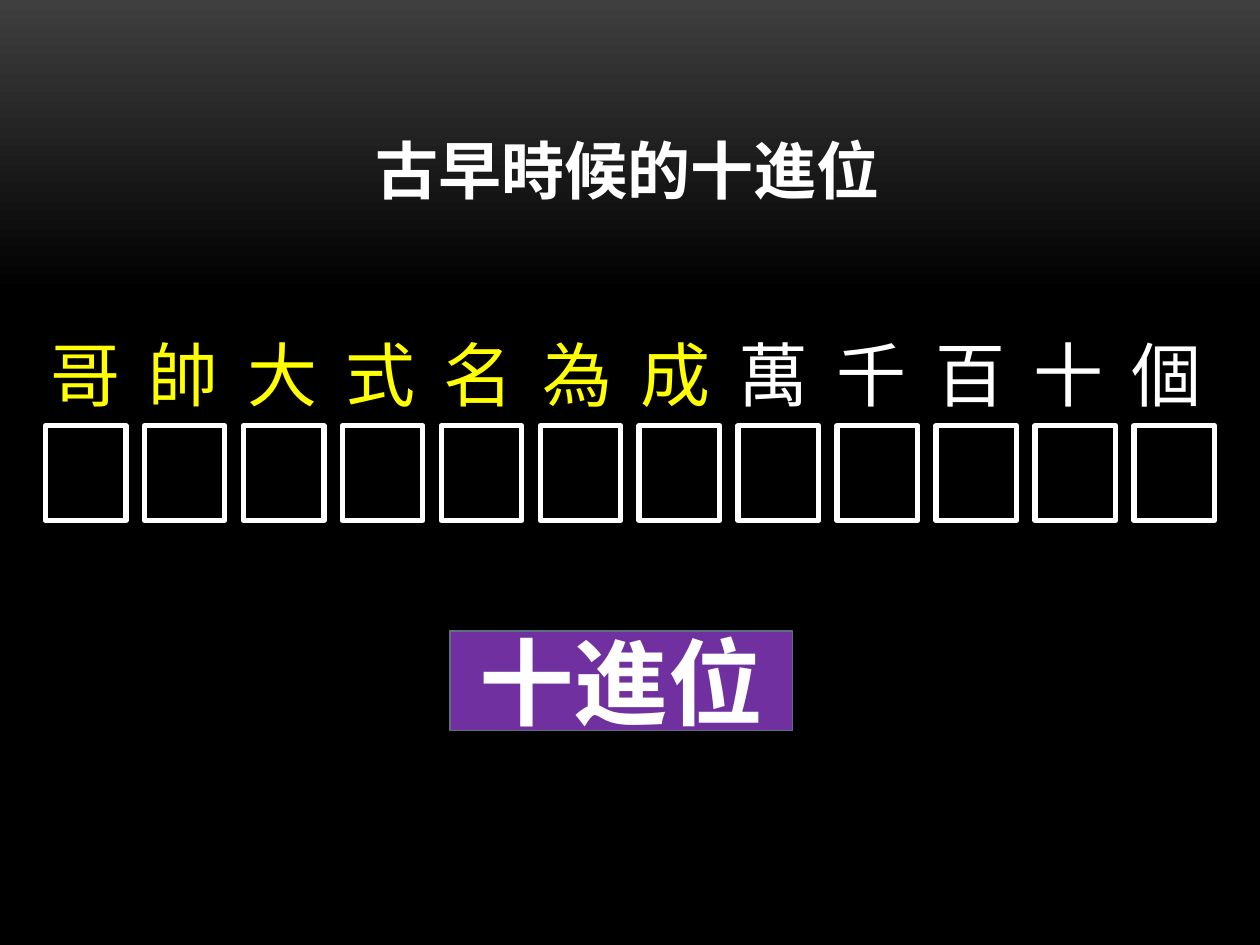
from pptx import Presentation
from pptx.dml.color import RGBColor
from pptx.enum.shapes import MSO_SHAPE as Shape
from pptx.enum.text import MSO_ANCHOR as Anchor, MSO_AUTO_SIZE as Fit, PP_ALIGN as Align
from pptx.util import Inches, Pt

WHITE, YELLOW, BLACK = "FFFFFF", "FFFF00", "000000"
PLACES = "哥帥大式名為成萬千百十個"
OLD = "哥帥大式名為成"


def paint(color, code):
    color.rgb = RGBColor.from_string(code)


def place(shape, left, top, width, height):
    shape.left, shape.top = Inches(left), Inches(top)
    shape.width, shape.height = Inches(width), Inches(height)


def write(shape, text, size, code, font, bold=False, align=Align.CENTER):
    shape.text_frame.text = text
    line = shape.text_frame.paragraphs[0]
    line.alignment = align
    line.font.name, line.font.size, line.font.bold = font, Pt(size), bold
    paint(line.font.color, code)


def add_rect(shapes, box, fill=None, edge=None, weight=1):
    rect = shapes.add_shape(Shape.RECTANGLE, *map(Inches, box))
    rect.shadow.inherit = False
    if fill:
        rect.fill.solid()
        paint(rect.fill.fore_color, fill)
    else:
        rect.fill.background()
    if edge:
        paint(rect.line.color, edge)
        rect.line.width = Pt(weight)
    else:
        rect.line.fill.background()
    frame = rect.text_frame
    frame.vertical_anchor = Anchor.MIDDLE
    frame.margin_left = frame.margin_right = 0
    return rect


def set_back(slide):
    fill = slide.background.fill
    fill.gradient()
    fill.gradient_angle = 270
    for stop, (spot, code) in zip(fill.gradient_stops, [(0, "3F3F3F"), (0.31, BLACK)]):
        stop.position = spot
        paint(stop.color, code)


def add_title(slide, box):
    title = slide.shapes.title
    place(title, *box)
    write(title, "古早時候的十進位", 36, WHITE, "Arial Narrow", True, Align.LEFT)
    frame = title.text_frame
    frame.word_wrap = False
    frame.auto_size = Fit.SHAPE_TO_FIT_TEXT
    frame.vertical_anchor = Anchor.TOP


def add_cells(slide, left, top, width, height):
    group = slide.shapes.add_group_shape()
    wide = 0.64
    step = (width - wide) / (len(PLACES) - 1)
    for i in range(len(PLACES)):
        add_rect(group.shapes, (left + i * step, top, wide, height), edge=WHITE, weight=3)


def add_names(slide, left, top, width, height):
    wide = 0.76
    step = (width - wide) / (len(PLACES) - 1)
    for i, name in enumerate(PLACES):
        rect = add_rect(slide.shapes, (left + i * step, top, wide, height), BLACK)
        write(rect, name, 40, YELLOW if name in OLD else WHITE, "Arial Narrow")


def add_label(slide, box):
    rect = add_rect(slide.shapes, box, "7030A0", "5D7080", 0.85)
    write(rect, "十進位", 54, WHITE, "Noto Sans CJK SC", True)


def main():
    deck = Presentation()
    deck.slide_width, deck.slide_height = Inches(10), Inches(7.5)
    slide = deck.slides.add_slide(deck.slide_layouts[5])
    set_back(slide)
    add_title(slide, (2.88, 0.99, 4.24, 0.71))
    add_cells(slide, 0.36, 3.38, 9.28, 0.75)
    add_label(slide, (3.57, 5.01, 2.72, 0.79))
    add_names(slide, 0.3, 2.65, 9.34, 0.63)
    deck.save("out.pptx")


if __name__ == "__main__":
    main()
